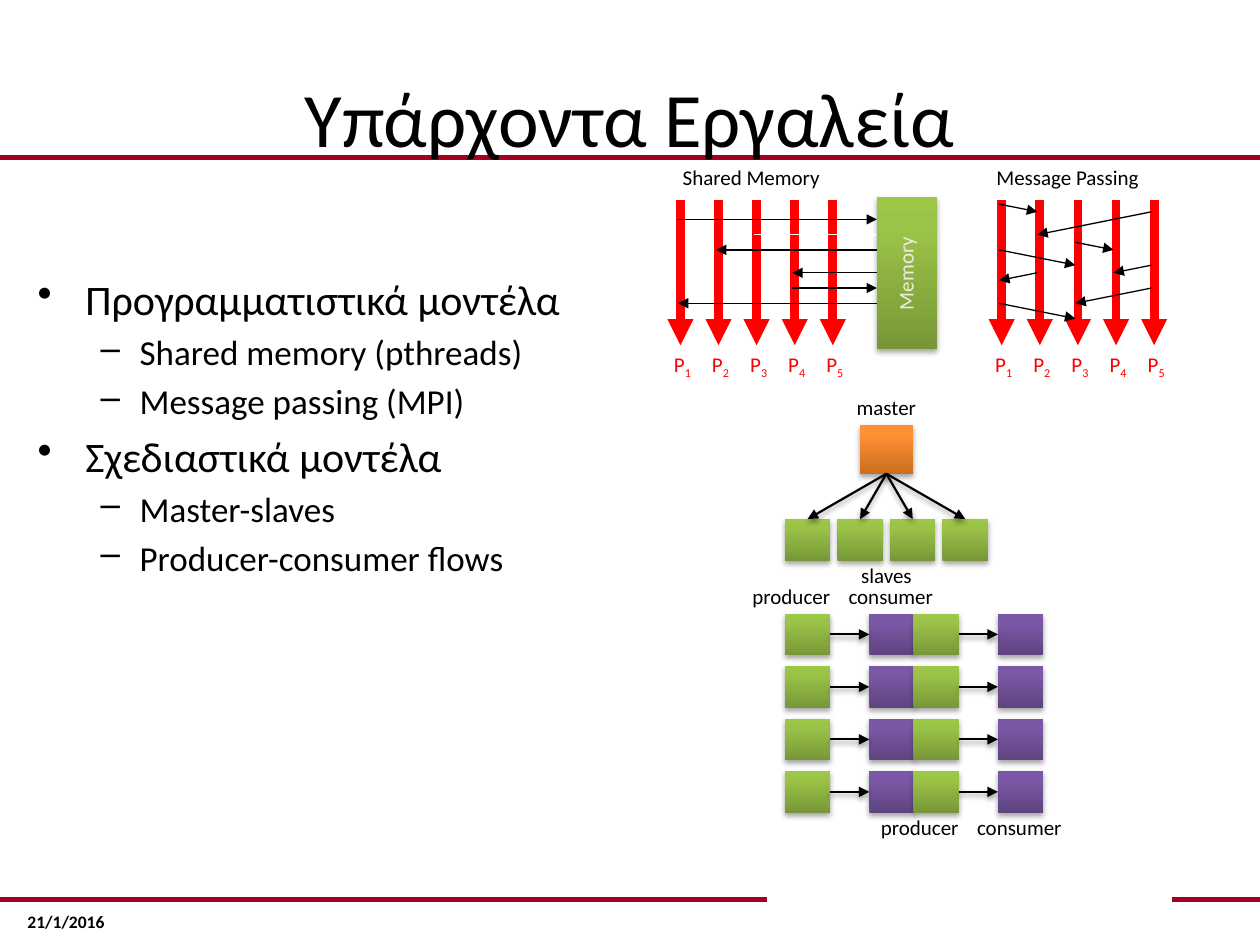
from collections import namedtuple

from lxml import etree
from pptx import Presentation
from pptx.dml.color import RGBColor
from pptx.enum.shapes import MSO_CONNECTOR, MSO_SHAPE
from pptx.enum.text import MSO_ANCHOR, PP_ALIGN
from pptx.oxml.ns import qn
from pptx.util import Inches, Pt

STRAIGHT = MSO_CONNECTOR.STRAIGHT
RECT, ROUNDED = MSO_SHAPE.RECTANGLE, MSO_SHAPE.ROUNDED_RECTANGLE
LEFT, CENTER = PP_ALIGN.LEFT, PP_ALIGN.CENTER
MIDDLE = MSO_ANCHOR.MIDDLE
TITLE_ONLY = 5
FONT = "Calibri"
BLACK, RED, CRIMSON, WHITE = "000000", "FF0000", "A50021", "FFFFFF"
GREEN = ("779737", "9BC348", "9DC746")
ORANGE = ("CC6E20", "FF9034", "FF9136")
PURPLE = ("5F4480", "7B58A6", "7C57A8")

Box = namedtuple("Box", "left top width height")
SLIDE = Box(0, 0, 10, 7.5)
TILE_W, TILE_H, PITCH = 0.36, 0.33, 1.25 / 3
LANES, TIME_ROWS = 5, 19

OUTLINE = [
    (0, "Προγραμματιστικά μοντέλα"),
    (1, "Shared memory (pthreads)"),
    (1, "Message passing (MPI)"),
    (0, "Σχεδιαστικά μοντέλα"),
    (1, "Master-slaves"),
    (1, "Producer-consumer flows"),
]
MESSAGES = [((0, 0), (1, 1)), ((4, 1), (1, 4)), ((2, 5), (3, 6)), ((4, 8), (3, 9)),
            ((4, 11), (2, 13)), ((0, 6), (2, 8)), ((1, 9), (0, 10)), ((0, 13), (2, 15))]
ACCESSES = [(0, 2, True, BLACK), (2, 4, True, WHITE), (1, 6, False, BLACK),
            (3, 9, False, BLACK), (3, 11, True, BLACK), (0, 13, False, BLACK)]


def rgb(value):
    """Turn a hex string into a colour."""
    return RGBColor.from_string(value)


def style(run, size, color=BLACK, bold=False):
    """Format one run."""
    run.font.name, run.font.size, run.font.bold = FONT, Pt(size), bold
    run.font.color.rgb = rgb(color)


def add_shadow(effects, opacity):
    """Put a soft downward shadow into an effect list."""
    shadow = etree.SubElement(effects, qn("a:outerShdw"), blurRad=str(Pt(3.1)),
                              dist=str(Pt(1.8)), dir="5400000", rotWithShape="0")
    tint = etree.SubElement(shadow, qn("a:srgbClr"), val=BLACK)
    etree.SubElement(tint, qn("a:alpha"), val=str(opacity * 1000))


def add_line(shapes, start, end, color=BLACK, weight=0.75, arrow=True, shadow=False):
    """Draw a straight line or arrow between two points."""
    line = shapes.add_connector(STRAIGHT, *map(Inches, (*start, *end)))
    line.line.color.rgb = rgb(color)
    line.line.width = Pt(weight)
    properties = line._element.spPr
    if arrow:
        etree.SubElement(properties.find(qn("a:ln")), qn("a:tailEnd"), type="triangle")
    effects = etree.SubElement(properties, qn("a:effectLst"))
    if shadow:
        add_shadow(effects, 38)


def add_tile(shapes, box, colors, kind=ROUNDED):
    """Draw a shaded block with a vertical gradient."""
    tile = shapes.add_shape(kind, *map(Inches, box))
    if kind == ROUNDED:
        tile.adjustments[0] = 0
    tile.fill.gradient()
    tile.fill.gradient_angle = 90
    stops = tile._element.spPr.find(qn("a:gradFill")).find(qn("a:gsLst"))
    stops.clear()
    for position, color in zip((0, 80, 100), colors):
        stop = etree.SubElement(stops, qn("a:gs"), pos=str(position * 1000))
        etree.SubElement(stop, qn("a:srgbClr"), val=color)
    tile.line.fill.background()
    tile.shadow.inherit = False
    add_shadow(tile._element.spPr.find(qn("a:effectLst")), 35)


def add_label(shapes, text, box, size=12, color=BLACK, align=LEFT, wrap=False,
              spacing=1.0, bold=False, subscript=""):
    """Write one line of text, with an optional subscript."""
    label = shapes.add_textbox(*map(Inches, box))
    label.text_frame.word_wrap = wrap
    paragraph = label.text_frame.paragraphs[0]
    paragraph.text = text
    paragraph.alignment, paragraph.line_spacing = align, spacing
    if subscript:
        index = paragraph.add_run()
        index.text = subscript
        index._r.get_or_add_rPr().set("baseline", "-25000")
    for run in paragraph.runs:
        style(run, size, color, bold)
    return label


def add_caption(shapes, text, center, top, width=1.08):
    """Write a tight caption centred on a position."""
    add_label(shapes, text, Box(center - width / 2, top, width, 0.26),
              align=CENTER, wrap=True, spacing=0.81)


def draw_frame(slide, box):
    """Draw the title, the coloured rules and the date."""
    header, footer = box.height / 6, box.height * 0.952
    for start, end, y in ((0.93, 1, footer), (0, 0.609, footer), (0, 1, header)):
        add_line(slide.shapes, (box.width * start, y), (box.width * end, y),
                 CRIMSON, 3, arrow=False)
    add_label(slide.shapes, "21/1/2016", Box(0.12, 7.18, 1.1, 0.32), 10, bold=True)
    title = slide.shapes.title
    title.left, title.top, title.width, title.height = map(
        Inches, (box.width * 0.05, box.height * 0.04, box.width * 0.9, header))
    title.text_frame.text = "Υπάρχοντα Εργαλεία"
    title.text_frame.vertical_anchor = MIDDLE
    title.text_frame.paragraphs[0].alignment = CENTER
    style(title.text_frame.paragraphs[0].runs[0], 44)
    slide.shapes._spTree.append(title._element)


def draw_outline(slide, box):
    """Write the two-level bullet list."""
    frame = slide.shapes.add_textbox(*map(Inches, box)).text_frame
    frame.word_wrap = True
    for number, (level, text) in enumerate(OUTLINE):
        paragraph = frame.paragraphs[0] if number == 0 else frame.add_paragraph()
        paragraph.text, paragraph.level = text, level
        margin, hanging, bullet, size = ((0.38, 0.38, "•", 24), (0.81, 0.31, "–", 20))[level]
        properties = paragraph._p.get_or_add_pPr()
        properties.set("marL", str(Inches(margin)))
        properties.set("indent", str(-Inches(hanging)))
        etree.SubElement(properties, qn("a:buChar"), char=bullet)
        paragraph.space_before = Pt(size * 0.2 if number else 0)
        style(paragraph.runs[0], size)


def grid_point(box, lane, row):
    """Locate a time row on a process lane."""
    return (box.left - 0.02 + lane * box.width / (LANES - 1),
            box.top + (row + 0.5) * box.height / TIME_ROWS)


def draw_lanes(shapes, box, heading, heading_shift):
    """Draw the process lanes with their heading and names."""
    add_label(shapes, heading, Box(box.left + heading_shift, box.top - 0.33, 1.5, 0.3))
    for lane in range(LANES):
        x = box.left + lane * box.width / (LANES - 1)
        add_line(shapes, (x, box.top), (x, box.top + box.height), RED, 5)
        add_label(shapes, "P", Box(x - 0.15, box.top + box.height, 0.38, 0.3),
                  color=RED, subscript=str(lane + 1))


def draw_message_passing(slide, box):
    """Draw processes that exchange messages."""
    shapes = slide.shapes.add_group_shape().shapes
    draw_lanes(shapes, box, "Message Passing", -0.14)
    for sender, receiver in MESSAGES:
        add_line(shapes, grid_point(box, *sender), grid_point(box, *receiver))


def draw_shared_memory(slide, box):
    """Draw processes that read and write one memory."""
    shapes = slide.shapes.add_group_shape().shapes
    draw_lanes(shapes, box, "Shared Memory", -0.08)
    memory = Box(box.left + 1.56, box.top - 0.03, 0.48, 1.21)
    add_tile(shapes, memory, GREEN, RECT)
    for lane, row, writes, color in ACCESSES:
        process = grid_point(box, lane, row)
        cell = (memory.left, process[1])
        add_line(shapes, *((process, cell) if writes else (cell, process)), color)
    name = add_label(shapes, "Memory", Box(memory.left - 0.38, box.top + 0.43, 1.21, 0.3),
                     color="EEECE1", align=CENTER, wrap=True)
    name.rotation = 270


def draw_master_slaves(slide, box):
    """Draw a master that feeds a row of slaves."""
    shapes = slide.shapes.add_group_shape().shapes
    center, slave_top = box.left + box.width / 2, box.top + 1
    add_tile(shapes, Box(center - 0.21, box.top + 0.25, 0.42, 0.39), ORANGE)
    slaves = [box.left + column * PITCH for column in range(4)]
    for x in slaves:
        add_tile(shapes, Box(x, slave_top, TILE_W, TILE_H), GREEN)
    for x in slaves:
        add_line(shapes, (center, box.top + 0.64), (x + TILE_W / 2, slave_top),
                 weight=1.25, shadow=True)
    add_caption(shapes, "master", center, box.top)
    add_caption(shapes, "slaves", center, slave_top + TILE_H)


def draw_flows(slide, box):
    """Draw two stages of producers and consumers."""
    shapes = slide.shapes.add_group_shape().shapes
    reach = 0.67
    stages = ((box.left, box.top), (box.left + 1.02, box.top + box.height - 0.26))
    for x, caption_top in stages:
        for row in range(4):
            y = box.top + 0.25 + row * PITCH
            add_tile(shapes, Box(x, y, TILE_W, TILE_H), GREEN)
            add_tile(shapes, Box(x + reach, y, TILE_W, TILE_H), PURPLE)
            add_line(shapes, (x + TILE_W, y + TILE_H / 2), (x + reach, y + TILE_H / 2),
                     weight=1.25, shadow=True)
        add_caption(shapes, "producer", x + 0.05, caption_top)
        add_caption(shapes, "consumer", x + 0.84, caption_top)


def main():
    """Build and save the slide."""
    deck = Presentation()
    deck.slide_width, deck.slide_height = Inches(SLIDE.width), Inches(SLIDE.height)
    slide = deck.slides.add_slide(deck.slide_layouts[TITLE_ONLY])
    draw_frame(slide, SLIDE)
    draw_outline(slide, Box(0.2, 2.12, 9, 3.05))
    draw_message_passing(slide, Box(7.95, 1.59, 1.21, 1.15))
    draw_shared_memory(slide, Box(5.4, 1.59, 1.21, 1.15))
    draw_master_slaves(slide, Box(6.23, 3.12, 1.61, 1.59))
    draw_flows(slide, Box(6.23, 4.62, 2.05, 2.09))
    deck.save("out.pptx")


if __name__ == "__main__":
    main()
